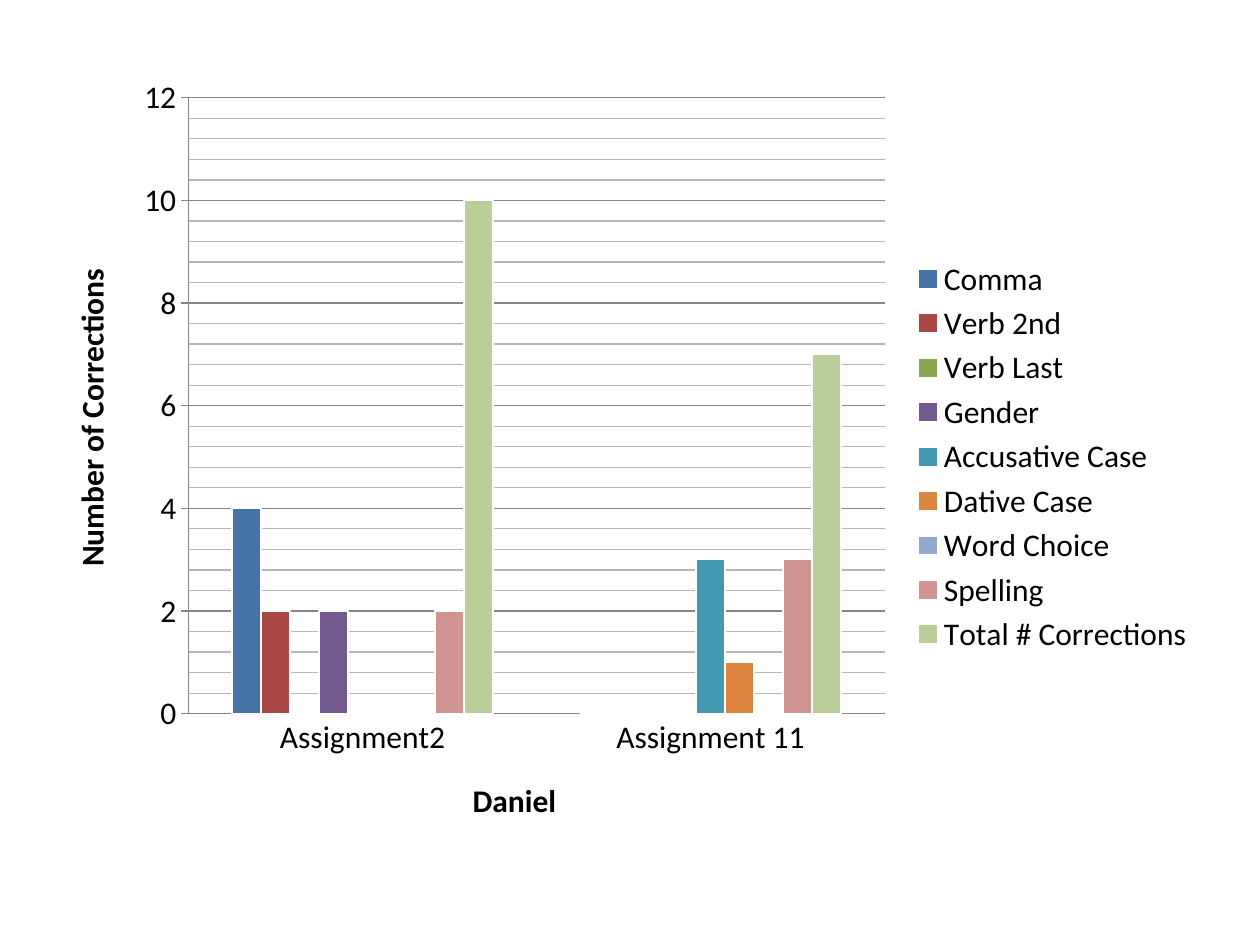
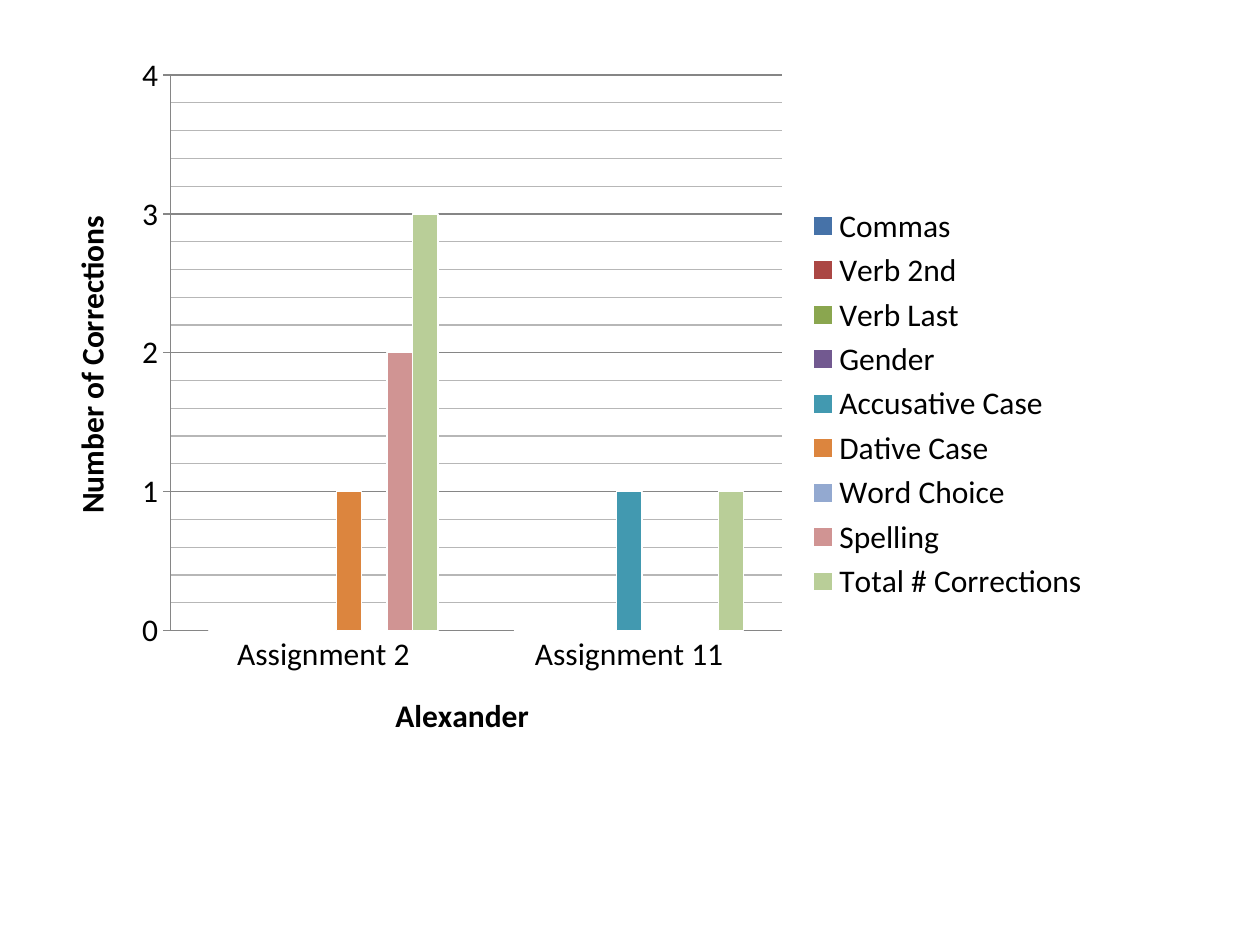
import copy

from pptx import Presentation
from pptx import util as u
from pptx.chart.data import CategoryChartData
from pptx.dml.color import RGBColor
from pptx.enum import chart as kinds
from pptx.oxml import ns

COLORS = {
    "text": "000000",
    "axis": "868686",
    "minor_grid": "B7B7B7",
    "bar_edge": "FFFFFF",
    "comma": "4672A8",
    "verb_second": "AB4744",
    "verb_last": "8AA64F",
    "gender": "725990",
    "accusative": "4299B0",
    "dative": "DC853E",
    "word_choice": "93A9D0",
    "spelling": "D09493",
    "total": "B9CE98",
}
BAR_COLORS = ["comma", "verb_second", "verb_last", "gender", "accusative",
              "dative", "word_choice", "spelling", "total"]
SHARED_NAMES = ["Verb 2nd", "Verb Last", "Gender", "Accusative Case",
                "Dative Case", "Word Choice", "Spelling", "Total # Corrections"]
STUDENTS = [
    {
        "name": "Daniel",
        "place": (0.33, 0.5, 9.25, 6.25),
        "comma_name": "Comma",
        "corrections": {
            "Assignment2": [4, 2, 0, 2, 0, 0, 0, 2, 10],
            "Assignment 11": [0, 0, 0, 0, 3, 1, 0, 3, 7],
        },
        "maximum": 12,
        "major": 2,
    },
    {
        "name": "Alexander",
        "place": (0.33, 0.33, 8.42, 5.75),
        "comma_name": "Commas",
        "corrections": {
            "Assignment 2": [0, 0, 0, 0, 0, 1, 0, 2, 3],
            "Assignment 11": [0, 0, 0, 0, 1, 0, 0, 0, 1],
        },
        "maximum": 4,
        "major": 1,
    },
]


def style_line(line, color):
    line.color.rgb = RGBColor.from_string(COLORS[color])
    line.width = u.Pt(0.75)


def style_font(font, bold=False):
    font.name = "Calibri"
    font.size = u.Pt(18)
    font.bold = bold
    font.color.rgb = RGBColor.from_string(COLORS["text"])


deck = Presentation()
deck.slide_width = u.Inches(10)
deck.slide_height = u.Inches(7.5)

for student in STUDENTS:
    page = deck.slides.add_slide(deck.slide_layouts[6])
    data = CategoryChartData()
    data.categories = list(student["corrections"])
    names = [student["comma_name"]] + SHARED_NAMES
    for name, values in zip(names, zip(*student["corrections"].values())):
        data.add_series(name, values)

    left, top, width, height = map(u.Inches, student["place"])
    chart = page.shapes.add_chart(kinds.XL_CHART_TYPE.COLUMN_CLUSTERED,
                                  left, top, width, height, data).chart
    style_font(chart.font)
    chart.has_title = False
    chart.has_legend = True
    chart.legend.position = kinds.XL_LEGEND_POSITION.RIGHT
    chart.legend.include_in_layout = False

    plot = chart.plots[0]
    plot.gap_width = 300
    plot.overlap = 0
    plot.vary_by_categories = False
    for series, color in zip(plot.series, BAR_COLORS):
        series.invert_if_negative = False
        series.format.fill.solid()
        series.format.fill.fore_color.rgb = RGBColor.from_string(COLORS[color])
        style_line(series.format.line, "bar_edge")

    category_axis = chart.category_axis
    value_axis = chart.value_axis
    for axis, title in ((category_axis, student["name"]),
                        (value_axis, "Number of Corrections")):
        frame = axis.axis_title.text_frame
        frame.text = title
        style_font(frame.paragraphs[0].runs[0].font, bold=True)
        style_line(axis.format.line, "axis")
        axis.minor_tick_mark = kinds.XL_TICK_MARK.NONE

    category_axis.major_tick_mark = kinds.XL_TICK_MARK.NONE
    value_axis.major_tick_mark = kinds.XL_TICK_MARK.OUTSIDE
    value_axis.minimum_scale = 0
    value_axis.maximum_scale = student["maximum"]
    value_axis.major_unit = student["major"]
    value_axis.minor_unit = student["major"] / 5
    value_axis.has_major_gridlines = True
    value_axis.has_minor_gridlines = True

    grid_line = value_axis.major_gridlines.format.line
    style_line(grid_line, "minor_grid")
    major_grid, minor_grid = (next(chart.element.iter(ns.qn(tag)))
                              for tag in ("c:majorGridlines", "c:minorGridlines"))
    minor_grid.append(copy.deepcopy(major_grid[0]))
    style_line(grid_line, "axis")

deck.save("out.pptx")
